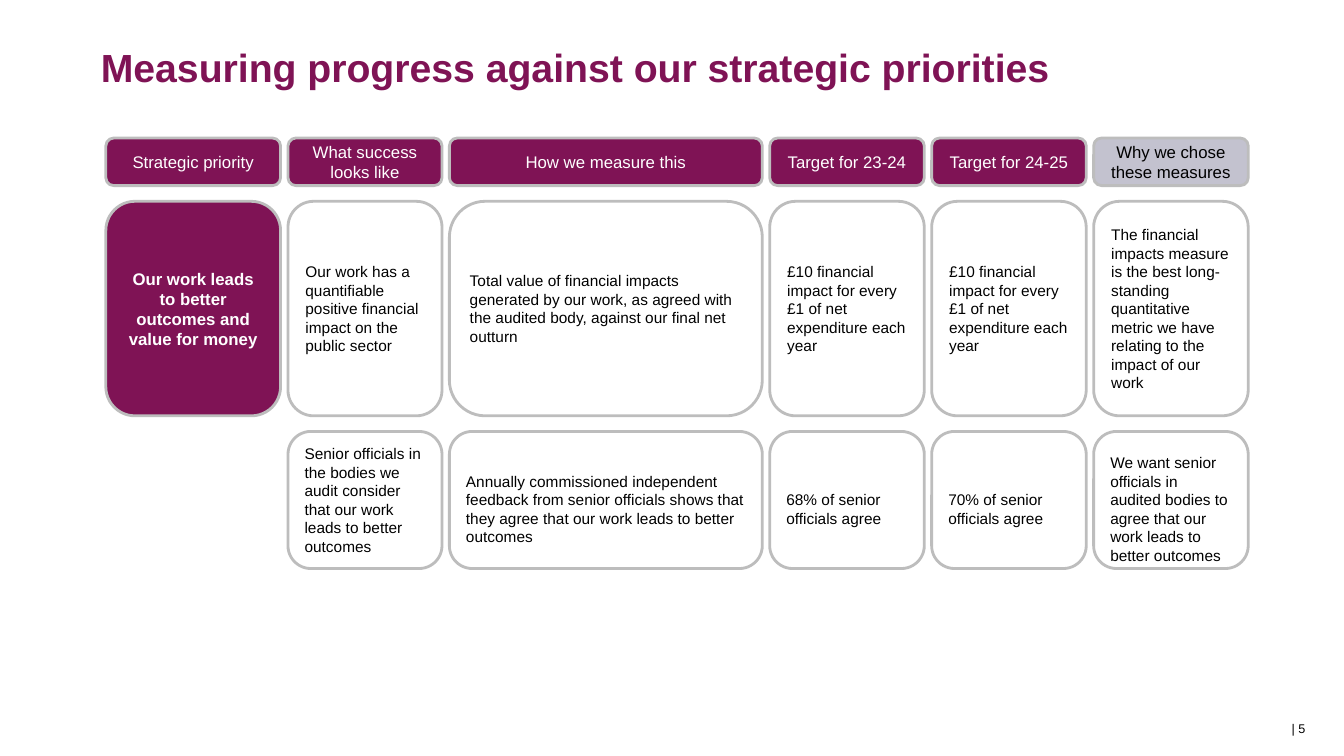
from dataclasses import dataclass

from pptx import Presentation
from pptx import util as u
from pptx.dml import color
from pptx.enum import shapes, text

PLUM, LILAC, GREY = "7F1355", "C3C2CF", "BDBDBD"
WHITE, BLACK = "FFFFFF", "000000"
CENTER, LEFT, RIGHT = text.PP_ALIGN.CENTER, text.PP_ALIGN.LEFT, text.PP_ALIGN.RIGHT

# Grid, in points
GRID_LEFT, GRID_TOP = 75.6, 98.6
COLUMN_GAP, ROW_GAP = 5.3, 11.2
COLUMN_WIDTHS = [124.8, 110, 223.5, 110.4, 110.4, 110.4]
ROW_HEIGHTS = [34, 153.2, 97.9]
INSET = 3.6
LINE_DROP = 12.6  # the last row's text starts one line lower


@dataclass
class Style:
    size: float
    ink: str
    fill: str | None = None
    align: text.PP_ALIGN = LEFT
    bold: bool = False
    top_inset: float = INSET


@dataclass
class Card:
    row: int
    column: int
    words: str
    style: Style


HEADING = Style(12, WHITE, PLUM, CENTER)
REASON_HEADING = Style(12, BLACK, LILAC, CENTER)
PRIORITY = Style(12, WHITE, PLUM, CENTER, bold=True)
MEASURE = Style(11, BLACK)
LOW_MEASURE = Style(11, BLACK, top_inset=INSET + LINE_DROP)
TITLE = Style(28, PLUM, align=CENTER, bold=True)
PAGE_NUMBER = Style(9, BLACK, align=RIGHT)

CARDS = [
    Card(0, 0, "Strategic priority", HEADING),
    Card(0, 1, "What success looks like", HEADING),
    Card(0, 2, "How we measure this", HEADING),
    Card(0, 3, "Target for 23-24", HEADING),
    Card(0, 4, "Target for 24-25", HEADING),
    Card(0, 5, "Why we chose these measures", REASON_HEADING),
    Card(1, 0, "Our work leads to better outcomes and value for money", PRIORITY),
    Card(1, 1, "Our work has a quantifiable positive financial impact on the "
         "public sector", MEASURE),
    Card(1, 2, "Total value of financial impacts generated by our work, as agreed "
         "with the audited body, against our final net outturn", MEASURE),
    *(Card(1, column, "£10 financial impact for every £1 of net expenditure each year",
           MEASURE) for column in (3, 4)),
    Card(1, 5, "The financial impacts measure is the best long-standing quantitative "
         "metric we have relating to the impact of our work", MEASURE),
    Card(2, 1, "Senior officials in the bodies we audit consider that our work leads "
         "to better outcomes", MEASURE),
    Card(2, 2, "Annually commissioned independent feedback from senior officials shows "
         "that they agree that our work leads to better outcomes", LOW_MEASURE),
    Card(2, 3, "68% of senior officials agree", LOW_MEASURE),
    Card(2, 4, "70% of senior officials agree", LOW_MEASURE),
    Card(2, 5, "We want senior officials in audited bodies to agree that our work "
         "leads to better outcomes", LOW_MEASURE),
]


def paint(target, hex_code: str) -> None:
    target.rgb = color.RGBColor.from_string(hex_code)


def apply(target, values: dict) -> None:
    for name, value in values.items():
        setattr(target, name, value)


def write(box, words: str, style: Style) -> None:
    frame = box.text_frame
    apply(frame, {
        "word_wrap": True,
        "auto_size": text.MSO_AUTO_SIZE.NONE,
        "vertical_anchor": text.MSO_ANCHOR.MIDDLE,
        "margin_top": u.Pt(style.top_inset),
        "margin_bottom": u.Pt(INSET),
    })
    para = frame.paragraphs[0]
    para.alignment = style.align
    span = para.add_run()
    span.text = words
    apply(span.font, {"name": "Arial", "size": u.Pt(style.size), "bold": style.bold})
    paint(span.font.color, style.ink)


def draw_card(page, card: Card) -> None:
    left = GRID_LEFT + sum(COLUMN_WIDTHS[:card.column]) + COLUMN_GAP * card.column
    top = GRID_TOP + sum(ROW_HEIGHTS[:card.row]) + ROW_GAP * card.row
    box = page.shapes.add_shape(
        shapes.MSO_SHAPE.ROUNDED_RECTANGLE, u.Pt(left), u.Pt(top),
        u.Pt(COLUMN_WIDTHS[card.column]), u.Pt(ROW_HEIGHTS[card.row]))
    box.shadow.inherit = False
    if card.style.fill:
        box.fill.solid()
        paint(box.fill.fore_color, card.style.fill)
    else:
        box.fill.background()
    paint(box.line.color, GREY)
    box.line.width = u.Pt(2)
    write(box, card.words, card.style)


def main() -> None:
    deck = Presentation()
    apply(deck, {"slide_width": u.Pt(960), "slide_height": u.Pt(540)})
    page = deck.slides.add_slide(deck.slide_layouts[5])

    # Title
    title = page.shapes.title
    apply(title, {"left": u.Pt(-8), "top": u.Pt(15),
                  "width": u.Pt(837.5), "height": u.Pt(65.5)})
    write(title, "Measuring progress against our strategic priorities", TITLE)

    # Headings and measures
    for card in CARDS:
        draw_card(page, card)

    # Page number
    number = page.shapes.add_textbox(u.Pt(894.2), u.Pt(511.2), u.Pt(45.4), u.Pt(18))
    write(number, "| 5", PAGE_NUMBER)

    deck.save("out.pptx")


if __name__ == "__main__":
    main()
